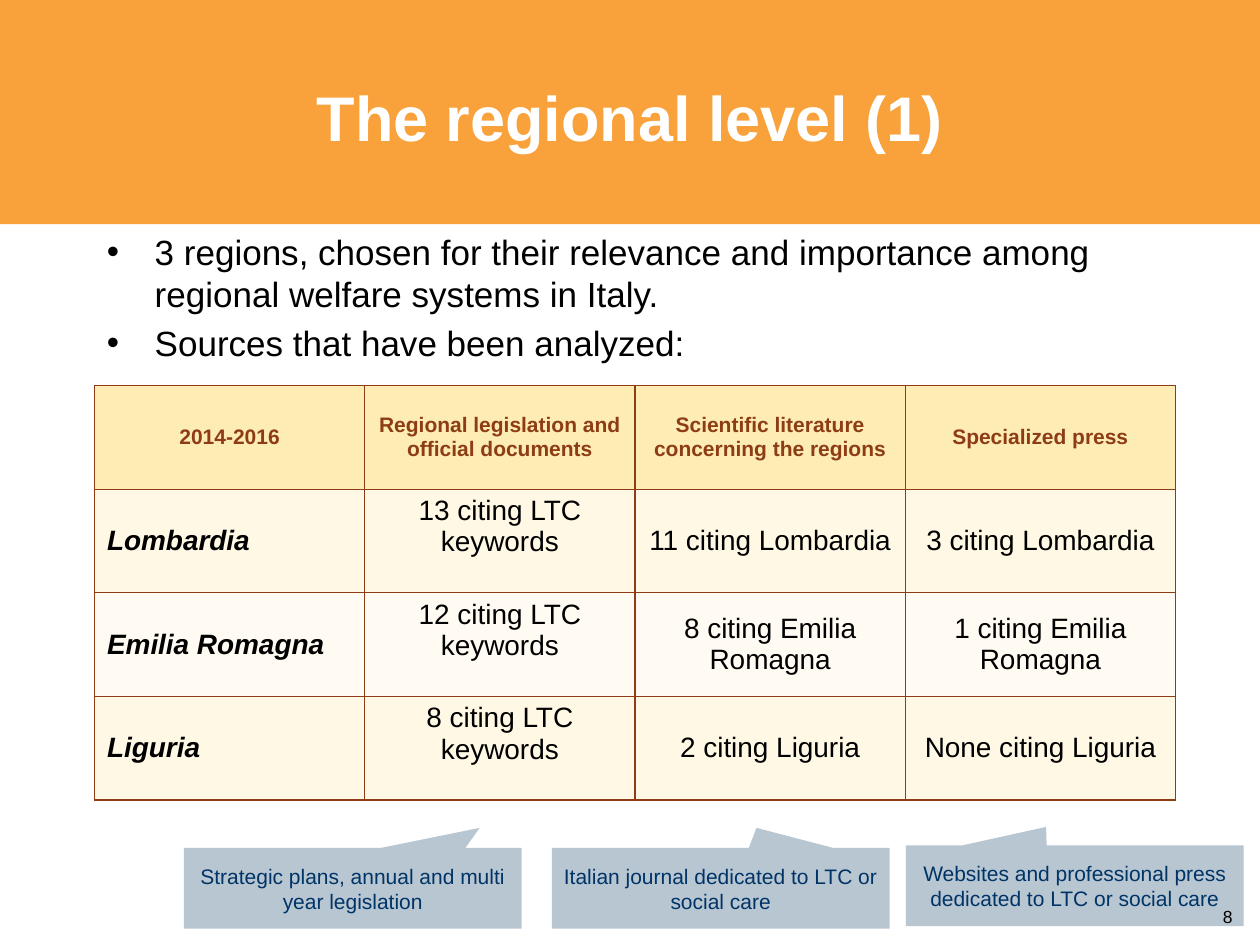
from lxml.etree import SubElement
from pptx import Presentation
from pptx.dml.color import RGBColor
from pptx.enum.shapes import MSO_SHAPE
from pptx.enum.text import MSO_ANCHOR, PP_ALIGN
from pptx.oxml.ns import qn
from pptx.util import Inches, Pt

FONT = "Arial"
ORANGE, BROWN, BLUE_GREY, NAVY = "F9A13A", "8D3C15", "B7C6D1", "003366"
HEADER_FILL, ROW_FILLS = "FDECB3", ("FEF8E5", "FFFBF2")

BULLETS = [
    "3 regions, chosen for their relevance and importance among regional welfare systems in Italy.",
    "Sources that have been analyzed:",
]
SOURCES = [
    ["2014-2016", "Regional legislation and official documents",
     "Scientific literature concerning the regions", "Specialized press"],
    ["Lombardia", "13 citing LTC keywords", "11 citing Lombardia", "3 citing Lombardia"],
    ["Emilia Romagna", "12 citing LTC keywords", "8 citing Emilia Romagna", "1 citing Emilia Romagna"],
    ["Liguria", "8 citing LTC keywords", "2 citing Liguria", "None citing Liguria"],
]
# left, top, pointer x, pointer y, text
CALLOUTS = [
    (1.46, 6.73, 0.376, -0.749, "Strategic plans, annual and multi year legislation"),
    (4.38, 6.73, 0.106, -0.749, "Italian journal dedicated to LTC or social care"),
    (7.19, 6.71, -0.085, -0.729, "Websites and professional press dedicated to LTC or social care"),
]


def rgb(color):
    return RGBColor.from_string(color)


def add_run(p, text, size, color="000000", bold=False, italic=False, align=PP_ALIGN.LEFT):
    p.alignment = align
    r = p.add_run()
    r.text = text
    r.font.name, r.font.size = FONT, Pt(size)
    r.font.bold, r.font.italic = bold, italic
    r.font.color.rgb = rgb(color)


def add_box(s, left, top, width, height, anchor=MSO_ANCHOR.TOP):
    box = s.shapes.add_textbox(Inches(left), Inches(top), Inches(width), Inches(height))
    tf = box.text_frame
    tf.word_wrap = True
    tf.vertical_anchor = anchor
    return tf


def add_filled_shape(s, kind, left, top, width, height, color):
    sp = s.shapes.add_shape(kind, Inches(left), Inches(top), Inches(width), Inches(height))
    sp.shadow.inherit = False
    sp.fill.solid()
    sp.fill.fore_color.rgb = rgb(color)
    sp.line.fill.background()
    return sp


def add_bullets(tf, items):
    for i, text in enumerate(items):
        p = tf.add_paragraph() if i else tf.paragraphs[0]
        pPr = p._p.get_or_add_pPr()
        pPr.set("marL", str(Inches(0.38)))
        pPr.set("indent", str(-Inches(0.38)))
        SubElement(pPr, qn("a:buFont")).set("typeface", FONT)
        SubElement(pPr, qn("a:buChar")).set("char", "•")
        if i:
            p.space_before = Pt(4)
        add_run(p, text, 20)


def set_borders(cell, color, width):
    tcPr = cell._tc.get_or_add_tcPr()
    for side in ("a:lnL", "a:lnR", "a:lnT", "a:lnB"):
        ln = SubElement(tcPr, qn(side), w=str(Pt(width)))
        fill = SubElement(ln, qn("a:solidFill"))
        SubElement(fill, qn("a:srgbClr")).set("val", color)


def add_sources_table(s, rows):
    shape = s.shapes.add_table(len(rows), len(rows[0]), Inches(0.75), Inches(3.06),
                               Inches(8.58), Inches(3.29))
    for i, row in enumerate(rows):
        for j, text in enumerate(row):
            cell = shape.table.cell(i, j)
            set_borders(cell, BROWN, 0.75)
            cell.fill.solid()
            cell.fill.fore_color.rgb = rgb(ROW_FILLS[(i - 1) % 2] if i else HEADER_FILL)
            cell.vertical_anchor = MSO_ANCHOR.TOP if i and j == 1 else MSO_ANCHOR.MIDDLE
            p = cell.text_frame.paragraphs[0]
            if i == 0:
                add_run(p, text, 12, BROWN, bold=True, align=PP_ALIGN.CENTER)
            elif j == 0:
                add_run(p, text, 16, bold=True, italic=True)
            else:
                add_run(p, text, 16, align=PP_ALIGN.CENTER)


def add_callout(s, left, top, x, y, text):
    sp = add_filled_shape(s, MSO_SHAPE.RECTANGULAR_CALLOUT, left, top, 2.68, 0.64, BLUE_GREY)
    sp.adjustments[0], sp.adjustments[1] = x, y
    tf = sp.text_frame
    tf.word_wrap = True
    tf.vertical_anchor = MSO_ANCHOR.MIDDLE
    tf.margin_left = tf.margin_right = Inches(0.08)
    tf.margin_top = tf.margin_bottom = 0
    add_run(tf.paragraphs[0], text, 12, NAVY, align=PP_ALIGN.CENTER)


def main():
    prs = Presentation()
    prs.slide_width, prs.slide_height = Inches(10), Inches(7.5)
    s = prs.slides.add_slide(prs.slide_layouts[6])

    # Title band
    add_filled_shape(s, MSO_SHAPE.RECTANGLE, 0, 0, 10, 1.78, ORANGE)
    tf = add_box(s, 0.5, 0.3, 9, 1.25, MSO_ANCHOR.MIDDLE)
    add_run(tf.paragraphs[0], "The regional level (1)", 36, "FFFFFF", bold=True,
            align=PP_ALIGN.CENTER)

    # Body and table
    add_bullets(add_box(s, 0.75, 1.78, 9, 1.25), BULLETS)
    add_sources_table(s, SOURCES)

    # Explanations of the columns
    for callout in CALLOUTS:
        add_callout(s, *callout)

    # Page number
    tf = add_box(s, 8.44, 7.14, 1.44, 0.24)
    add_run(tf.paragraphs[0], "8", 10, align=PP_ALIGN.RIGHT)

    prs.save("out.pptx")


if __name__ == "__main__":
    main()
